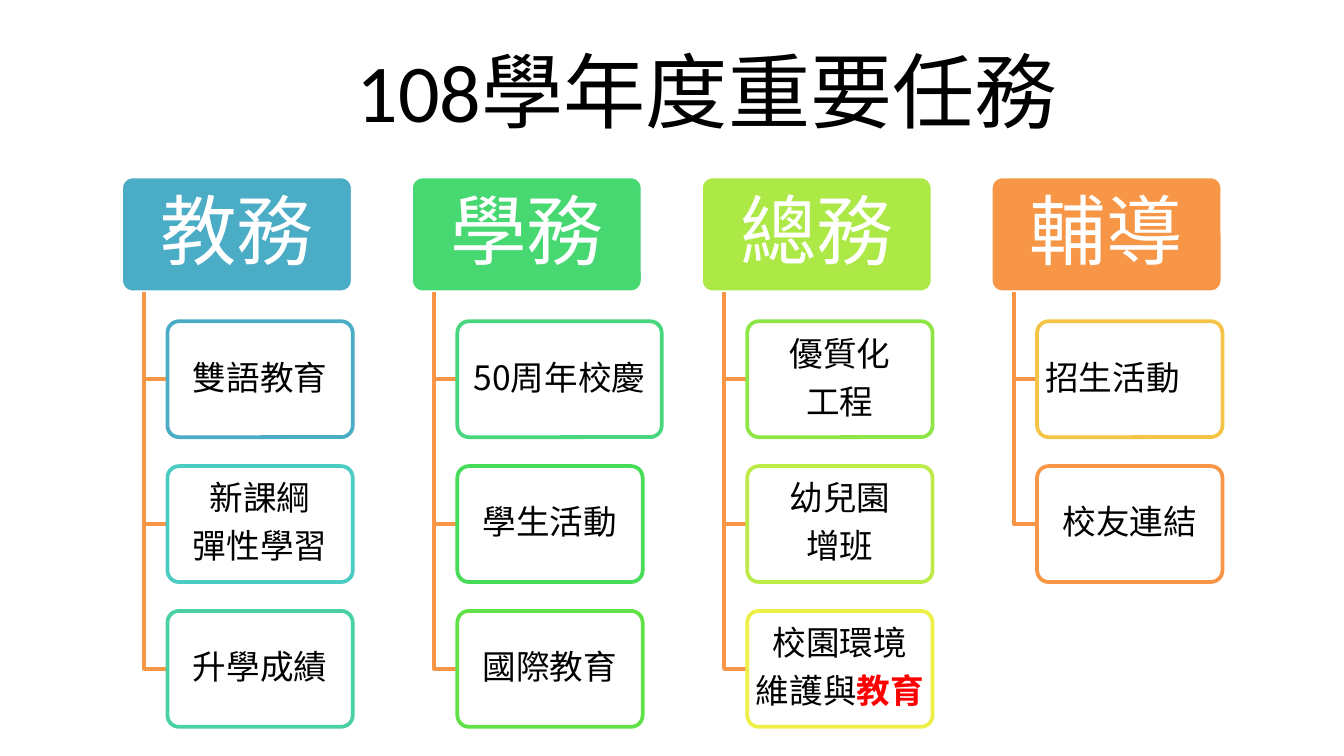
from lxml.etree import SubElement
from pptx import Presentation
from pptx.dml.color import RGBColor
from pptx.enum.shapes import MSO_SHAPE as Shape
from pptx.enum.text import MSO_ANCHOR as Anchor, PP_ALIGN as Align
from pptx.oxml.ns import qn
from pptx.util import Pt

TITLE = "108學年度重要任務"
EMPHASIS = "教育"
EMPHASIZED_LINE = "維護與教育"
LEFT_ALIGNED = "招生活動"
DEPARTMENTS = [
    ("教務", "4BACC6", [("雙語教育", "4BACC6"), ("新課綱\n彈性學習", "4ACCC3"), ("升學成績", "49D1A3")]),
    ("學務", "47D872", [("50周年校慶", "48D77E"), ("學生活動", "47DC57"), ("國際教育", "60E146")]),
    ("總務", "ACE946", [("優質化\n工程", "8DE646"), ("幼兒園\n增班", "BCEA46"), ("校園環境\n維護與教育", "EEEF46")]),
    ("輔導", "F79646", [("招生活動", "F3C446"), ("校友連結", "F79646")]),
]
WIDER = {"50周年校慶": 109.5}

TITLE_LATIN, EAST_ASIAN = "Calibri", "Noto Sans CJK SC"
BLACK, WHITE, RED, ORANGE = "000000", "FFFFFF", "FF0000", "F79646"
LEFT, TOP = 64.9, 94.5
COLUMN_STEP, ROW_STEP = 155.3, 77.6
HEADER_WIDTH, ITEM_WIDTH, HEIGHT = 124.1, 99.3, 62.1
STEM_INDENT, ITEM_INDENT = 12.4, 24.8


def color(value):
    return RGBColor.from_string(value)


def write(frame, text, size, text_color, inset=7.2, spacing=None, latin=EAST_ASIAN):
    frame.word_wrap = True
    frame.vertical_anchor = Anchor.MIDDLE
    frame.margin_left = frame.margin_right = Pt(inset)
    frame.margin_top = frame.margin_bottom = Pt(2)
    lines = text.split("\n")
    for index, line in enumerate(lines):
        paragraph = frame.add_paragraph() if index else frame.paragraphs[0]
        paragraph.alignment = Align.LEFT if line == LEFT_ALIGNED else Align.CENTER
        if spacing:
            paragraph.line_spacing = spacing
        if index < len(lines) - 1:
            paragraph.space_after = Pt(0.35 * size)
        paragraph.font.name = latin
        paragraph.font.size = Pt(size)
        paragraph.font.color.rgb = color(text_color)
        properties = paragraph._p.pPr.find(qn("a:defRPr"))
        SubElement(properties, qn("a:ea"), typeface=EAST_ASIAN)
        if line == EMPHASIZED_LINE:
            paragraph.add_run().text = line.removesuffix(EMPHASIS)
            run = paragraph.add_run()
            run.text = EMPHASIS
            run.font.bold = True
            run.font.color.rgb = color(RED)
        else:
            paragraph.add_run().text = line


def add_card(slide, left, top, width, fill, line):
    card = slide.shapes.add_shape(Shape.ROUNDED_RECTANGLE, Pt(left), Pt(top), Pt(width), Pt(HEIGHT))
    card.adjustments[0] = 0.1
    card.shadow.inherit = False
    card.fill.solid()
    card.fill.fore_color.rgb = color(fill)
    card.line.color.rgb = color(line)
    card.line.width = Pt(2)
    return card


def add_elbow(slide, left, top, right, bottom):
    builder = slide.shapes.build_freeform(Pt(left), Pt(top))
    builder.add_line_segments([(Pt(left), Pt(bottom)), (Pt(right), Pt(bottom))], close=False)
    elbow = builder.convert_to_shape()
    elbow.shadow.inherit = False
    elbow.fill.background()
    elbow.line.color.rgb = color(ORANGE)
    elbow.line.width = Pt(2)


def main():
    """Build the slide of yearly tasks by department."""
    presentation = Presentation()
    presentation.slide_width, presentation.slide_height = Pt(720), Pt(405)
    slide = presentation.slides.add_slide(presentation.slide_layouts[6])

    title = slide.shapes.add_textbox(Pt(54.7), Pt(17), Pt(648), Pt(62))
    write(title.text_frame, TITLE, 44, BLACK, latin=TITLE_LATIN)

    for column, (department, fill, tasks) in enumerate(DEPARTMENTS):
        left = LEFT + column * COLUMN_STEP
        header = add_card(slide, left, TOP, HEADER_WIDTH, fill, WHITE)
        write(header.text_frame, department, 41, WHITE, 6.3, 0.9)
        for row, (task, outline) in enumerate(tasks, 1):
            top = TOP + row * ROW_STEP
            item_left = left + ITEM_INDENT
            add_elbow(slide, left + STEM_INDENT, TOP + HEIGHT, item_left, top + HEIGHT / 2)
            card = add_card(slide, item_left, top, WIDER.get(task, ITEM_WIDTH), WHITE, outline)
            solid = card.fill.fore_color._xFill
            SubElement(solid.find(qn("a:srgbClr")), qn("a:alpha"), val="90000")
            write(card.text_frame, task, 18, BLACK, 2.6, 0.9)

    presentation.save("out.pptx")


if __name__ == "__main__":
    main()
